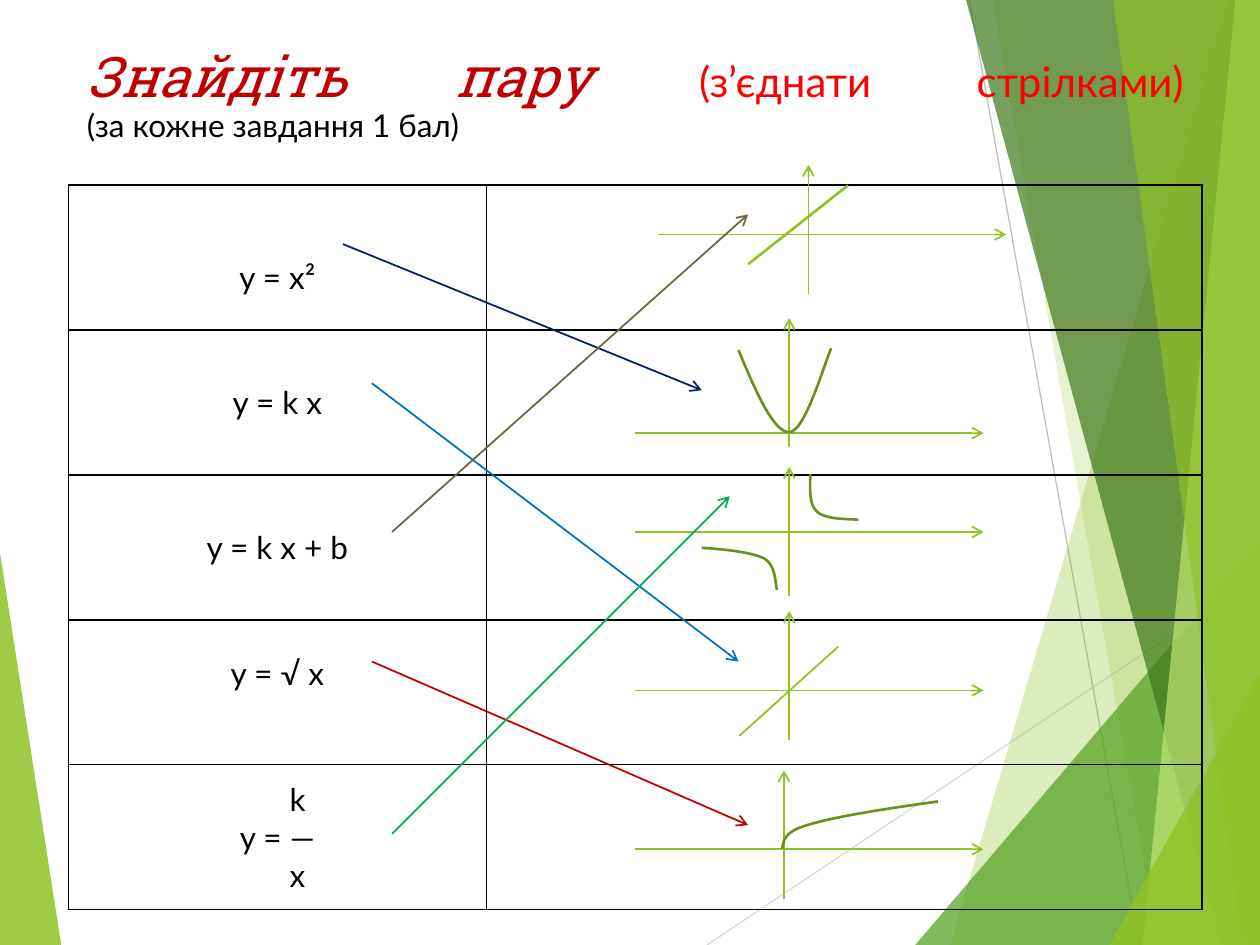
"""Build a slide that pairs function formulas with their graphs."""
from dataclasses import dataclass

from lxml.etree import SubElement
from pptx import Presentation
from pptx.dml.color import RGBColor
from pptx.enum.shapes import MSO_CONNECTOR
from pptx.enum.text import MSO_ANCHOR, MSO_AUTO_SIZE, PP_ALIGN
from pptx.oxml import parse_xml
from pptx.oxml.ns import nsdecls, qn
from pptx.util import Pt

WIDTH, HEIGHT = 720, 540
ROW_HEIGHT = 82.8
AXIS_WIDTH, AXIS_HEIGHT = 199, 73.8
CELL_MARGIN = 3.6

LIME = RGBColor(0x90, 0xC2, 0x26)
GREEN = RGBColor(0x54, 0xA0, 0x21)
FOREST = RGBColor(0x3F, 0x78, 0x19)
PALE_LIME = RGBColor(0xC0, 0xE4, 0x74)
OLIVE = RGBColor(0x6B, 0x90, 0x1C)
LIGHT_GRAY = RGBColor(0xD9, 0xD9, 0xD9)
GRAY = RGBColor(0xBF, 0xBF, 0xBF)
NAVY = RGBColor(0x00, 0x20, 0x60)
BLUE = RGBColor(0x00, 0x70, 0xC0)
BROWN = RGBColor(0x6D, 0x65, 0x40)
DARK_RED = RGBColor(0xC0, 0x00, 0x00)
RED = RGBColor(0xFF, 0x00, 0x00)
EMERALD = RGBColor(0x00, 0xB0, 0x50)
BLACK = RGBColor(0x00, 0x00, 0x00)

Point = tuple[float, float]


@dataclass
class Panel:
    points: list[Point]
    color: RGBColor
    opacity: int


@dataclass
class Line:
    start: Point
    end: Point
    color: RGBColor
    weight: float = 1
    arrow: bool = False


@dataclass
class Axes:
    left: float
    horizontal_y: float
    vertical_x: float
    bottom: float


@dataclass
class Formula:
    lines: list[str]
    extra_top: float = 0
    extra_bottom: float = 0


RIGHT_EDGE = [(WIDTH, HEIGHT), (WIDTH, 0)]
CORNER = (WIDTH, HEIGHT)
LEFT_PANEL = Panel([(0, 316), (35, HEIGHT), (0, HEIGHT)], LIME, 85)
RIGHT_PANELS = [
    Panel([(702, 0), (543, HEIGHT), *RIGHT_EDGE], LIME, 30),
    Panel([(567, 0), (662, HEIGHT), *RIGHT_EDGE], LIME, 20),
    Panel([(523, HEIGHT), (WIDTH, 309), CORNER], GREEN, 72),
    Panel([(552, 0), (698, HEIGHT), *RIGHT_EDGE], FOREST, 70),
    Panel([(706, 0), (653, HEIGHT), *RIGHT_EDGE], PALE_LIME, 70),
    Panel([(636, 0), (710, HEIGHT), *RIGHT_EDGE], LIME, 65),
    Panel([(634, HEIGHT), (WIDTH, 385), CORNER], LIME, 80),
]
BACKDROP_LINES = [
    Line((404, HEIGHT), (WIDTH, 329), LIGHT_GRAY, 0.75),
    Line((554, 0), (651, HEIGHT), GRAY, 0.75),
]
FORMULAS = [
    Formula(["y = x²"], extra_top=22),
    Formula(["y = k x"]),
    Formula(["y = k x + b"]),
    Formula(["y = √ x"], extra_bottom=22),
    Formula(["k", "y = —", "x"]),
]
AXES = [
    Axes(376, 134, 462, 168),
    Axes(363, 247.5, 451, 255.6),
    Axes(363, 304, 451, 340.6),
    Axes(363, 394.5, 451, 423),
    Axes(363, 485.3, 448, 514),
]
GRAPH_LINES = [
    Line((484.5, 106), (427.5, 151), LIME, 1.5),
    Line((479, 369.5), (422.5, 420.5), LIME),
]
CURVES = [
    [(422, 200), (432, 224), (442, 247), (451, 247), (460, 247), (471, 208), (475, 199)],
    [(463, 271), (463, 279), (462, 288), (467, 292.5), (472, 297), (484.5, 296.5), (490.5, 297)],
    [(401, 313), (415, 314), (429, 315.5), (436.5, 319), (443.5, 323), (443, 333.5), (444, 337)],
    [(447, 485), (448, 480), (448, 475), (463, 471), (478, 466.5), (507, 462), (536, 458)],
]
ANSWERS = [
    Line((196, 139.5), (401, 223), NAVY, arrow=True),
    Line((212.5, 219), (422, 378), BLUE, arrow=True),
    Line((224, 304), (427.5, 122.5), BROWN, arrow=True),
    Line((212.5, 378), (427.5, 471.5), DARK_RED, arrow=True),
    Line((224, 476.5), (417, 283.5), EMERALD, arrow=True),
]


def draw_outline(slide, points: list[Point], close: bool):
    places = [(Pt(x), Pt(y)) for x, y in points]
    builder = slide.shapes.build_freeform(*places[0])
    builder.add_line_segments(places[1:], close=close)
    shape = builder.convert_to_shape()
    shape.shadow.inherit = False
    return shape


def draw_panel(slide, panel: Panel) -> None:
    shape = draw_outline(slide, panel.points, True)
    shape.line.fill.background()
    shape.fill.solid()
    shape.fill.fore_color.rgb = panel.color
    color = shape.element.spPr.find(qn("a:solidFill"))[0]
    SubElement(color, qn("a:alpha")).set("val", str(panel.opacity * 1000))


def draw_line(slide, line: Line) -> None:
    ends = [Pt(value) for value in (*line.start, *line.end)]
    connector = slide.shapes.add_connector(MSO_CONNECTOR.STRAIGHT, *ends)
    connector.line.color.rgb = line.color
    connector.line.width = Pt(line.weight)
    if line.arrow:
        SubElement(connector.get_or_add_ln(), qn("a:tailEnd")).set("type", "arrow")
    SubElement(connector.element.spPr, qn("a:effectLst"))


def draw_axes(slide, axes: Axes) -> None:
    y, x = axes.horizontal_y, axes.vertical_x
    draw_line(slide, Line((axes.left, y), (axes.left + AXIS_WIDTH, y), LIME, arrow=True))
    draw_line(slide, Line((x, axes.bottom), (x, axes.bottom - AXIS_HEIGHT), LIME, arrow=True))


def bezier(a: Point, b: Point, c: Point, d: Point, steps: int = 16) -> list[Point]:
    def blend(t: float, axis: int) -> float:
        s = 1 - t
        return s**3 * a[axis] + 3 * s * s * t * b[axis] + 3 * s * t * t * c[axis] + t**3 * d[axis]

    return [(blend(i / steps, 0), blend(i / steps, 1)) for i in range(1, steps + 1)]


def draw_curve(slide, knots: list[Point]) -> None:
    points = [knots[0], *bezier(*knots[:4]), *bezier(*knots[3:])]
    shape = draw_outline(slide, points, False)
    shape.fill.background()
    shape.line.color.rgb = OLIVE
    shape.line.width = Pt(1.5)


def format_span(span, size: float, font: str, color: RGBColor, italic: bool = False) -> None:
    span.font.size, span.font.name, span.font.italic = Pt(size), font, italic
    span.font.color.rgb = color


def write_title(slide) -> None:
    title = slide.shapes.title
    title.element.getparent().append(title.element)
    title.left, title.top, title.width, title.height = Pt(42.5), Pt(16), Pt(641), Pt(78.5)
    frame = title.text_frame
    frame.word_wrap, frame.auto_size = True, MSO_AUTO_SIZE.NONE
    frame.vertical_anchor = MSO_ANCHOR.MIDDLE
    para = frame.paragraphs[0]
    para.alignment, para.line_spacing = PP_ALIGN.JUSTIFY, 0.9
    para.text = "Знайдіть пару \v(за кожне завдання 1 бал)"
    heading, note = para.runs
    format_span(heading, 32, "Roboto Slab", DARK_RED, True)
    format_span(note, 18, "Lato", BLACK)
    hint = para.add_run()
    hint.text = "(з’єднати стрілками)"
    format_span(hint, 24, "Lato", RED)
    heading._r.addnext(hint._r)


def format_cell(cell) -> None:
    cell.fill.background()
    properties = cell._tc.get_or_add_tcPr()
    for index, side in enumerate(("lnL", "lnR", "lnT", "lnB")):
        properties.insert(index, parse_xml(
            f'<a:{side} {nsdecls("a")} w="{Pt(1)}"><a:solidFill>'
            f'<a:srgbClr val="{BLACK}"/></a:solidFill></a:{side}>'))


def write_formula(cell, formula: Formula) -> None:
    cell.vertical_anchor = MSO_ANCHOR.MIDDLE
    cell.margin_top = Pt(CELL_MARGIN + formula.extra_top)
    cell.margin_bottom = Pt(CELL_MARGIN + formula.extra_bottom)
    cell.text_frame.text = "\n".join(formula.lines)
    for para in cell.text_frame.paragraphs:
        para.alignment = PP_ALIGN.CENTER
        format_span(para.runs[0], 18, "Lato", BLACK)
        if len(para.text) == 1:
            para._p.get_or_add_pPr().set("marL", str(Pt(23)))


def draw_table(slide) -> None:
    frame = slide.shapes.add_table(
        len(FORMULAS), 2, Pt(39), Pt(105.8), Pt(648), Pt(ROW_HEIGHT * len(FORMULAS)))
    table = frame.table
    table.first_row = table.horz_banding = False
    table.columns[0].width, table.columns[1].width = Pt(239), Pt(409)
    for row, formula in zip(table.rows, FORMULAS):
        row.height = Pt(ROW_HEIGHT)
        for cell in row.cells:
            format_cell(cell)
        write_formula(row.cells[0], formula)


def main() -> None:
    deck = Presentation()
    deck.slide_width, deck.slide_height = Pt(WIDTH), Pt(HEIGHT)
    slide = deck.slides.add_slide(deck.slide_layouts[5])
    draw_panel(slide, LEFT_PANEL)
    for line in BACKDROP_LINES:
        draw_line(slide, line)
    for panel in RIGHT_PANELS:
        draw_panel(slide, panel)
    write_title(slide)
    draw_table(slide)
    for axes in AXES:
        draw_axes(slide, axes)
    for curve in CURVES:
        draw_curve(slide, curve)
    for line in GRAPH_LINES + ANSWERS:
        draw_line(slide, line)
    deck.save("out.pptx")


if __name__ == "__main__":
    main()
